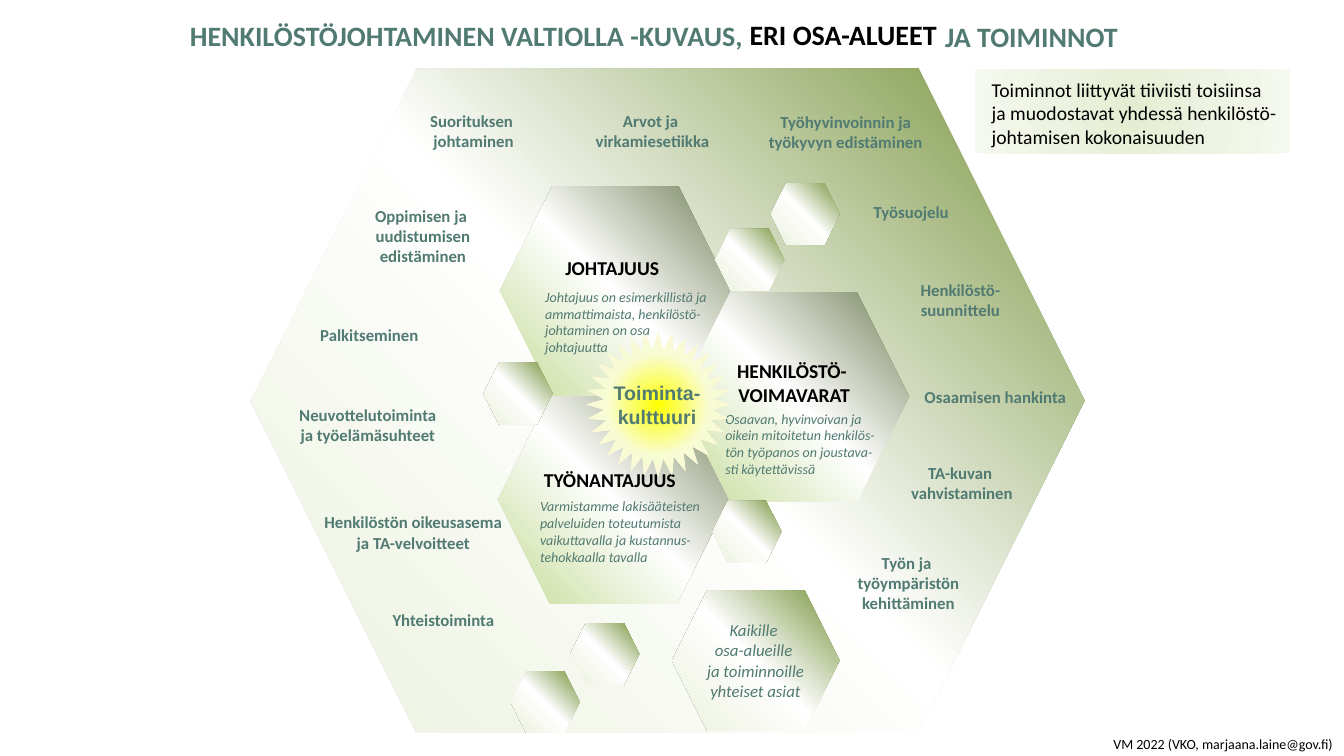
import copy
import dataclasses

import pptx
import pptx.dml.color
import pptx.enum.shapes
import pptx.enum.text
import pptx.oxml
import pptx.oxml.ns
import pptx.util

Cm = pptx.util.Cm
Kind = pptx.enum.shapes.MSO_SHAPE
Align = pptx.enum.text.PP_ALIGN
Anchor = pptx.enum.text.MSO_ANCHOR
qn = pptx.oxml.ns.qn


@dataclasses.dataclass(frozen=True)
class Theme:
    font: str = "Calibri"
    accent_font: str = "Arial"
    teal: str = "507A72"
    black: str = "000000"
    green: tuple = ("77933C", "FFFFFF", "EBF1DE")
    core: tuple = ("748259", "FFFFFF", "C5DB97")
    sun: tuple = ("FFFF00", "F8FCD4", "FDF2D9")
    note: tuple = ("E4EDD1", "EDF3E1", "F6F9F0")
    title: int = 20
    heading: int = 14
    label: int = 12
    small: int = 10


class Board:
    """Holds the theme and the current slide and draws each kind of element."""

    def __init__(self, page, theme):
        self.page = page
        self.theme = theme

    def group(self):
        return self.page.shapes.add_group_shape().shapes

    def shape(self, kind, place, colors, radial=False, into=None):
        canvas = self.page.shapes if into is None else into
        box = canvas.add_shape(kind, *map(Cm, place))
        box.shadow.inherit = False
        box.line.fill.background()
        box.fill.gradient()
        stops = "".join(
            f'<a:gs pos="{index * 50000}"><a:srgbClr val="{color}"/></a:gs>'
            for index, color in enumerate(colors)
        )
        if radial:
            course = '<a:path path="circle"><a:fillToRect l="50000" t="50000" r="50000" b="50000"/></a:path>'
        else:
            course = '<a:lin ang="8100000" scaled="0"/>'
        gradient = pptx.oxml.parse_xml(
            f'<a:gradFill {pptx.oxml.ns.nsdecls("a")} rotWithShape="1">'
            f"<a:gsLst>{stops}</a:gsLst>{course}</a:gradFill>"
        )
        properties = box.element.spPr
        properties.replace(properties.find(qn("a:gradFill")), gradient)

    def text(self, text, place, size=None, color=None, font=None, bold=False, italic=False,
             align=Align.LEFT, anchor=Anchor.TOP, wrap=True, inset=None, into=None):
        canvas = self.page.shapes if into is None else into
        frame = canvas.add_textbox(*map(Cm, place)).text_frame
        frame.word_wrap = wrap
        frame.vertical_anchor = anchor
        if inset is not None:
            frame.margin_left = frame.margin_right = Cm(inset)
            frame.margin_top = frame.margin_bottom = Cm(inset)
        frame.text = text
        for para in frame.paragraphs:
            para.alignment = align
            for span in para.runs:
                span.font.name = font or self.theme.font
                span.font.size = pptx.util.Pt(size or self.theme.label)
                span.font.bold = bold
                span.font.italic = italic
                span.font.color.rgb = pptx.dml.color.RGBColor.from_string(color or self.theme.teal)
            style = para._p.find(qn("a:r")).find(qn("a:rPr"))
            for line_break in para._p.findall(qn("a:br")):
                line_break.append(copy.deepcopy(style))

    def label(self, text, place, **style):
        self.text(text, place, align=Align.CENTER, anchor=Anchor.MIDDLE, **style)


CORE_SIZE = (5.82, 5.26)
CELL_SIZE = (1.73, 1.55)

CORES = [
    ((12.55, 9.96), "TYÖNANTAJUUS", (12.65, 11, 5.44, 2.18)),
    ((12.6, 4.7), "JOHTAJUUS", (12.32, 6.32, 6.22, 0.86)),
    ((17.09, 7.37), "HENKILÖSTÖ- \vVOIMAVARAT", (17.4, 8.92, 5.23, 1.45)),
]

CELLS = [(14.38, 15.7), (12.88, 16.92), (12.19, 9.14), (19.43, 4.62), (18.03, 5.77), (17.96, 12.62)]

DESCRIPTIONS = [
    ("Varmistamme lakisääteisten palveluiden toteutumista vaikuttavalla ja kustannus-\vtehokkaalla tavalla",
     (13.36, 12.42, 4.88, 1.96)),
    ("Osaavan, hyvinvoivan ja oikein mitoitetun henkilös-tön työpanos on joustava-sti käytettävissä",
     (18.03, 10.21, 4.37, 1.96)),
    ("Johtajuus on esimerkillistä ja ammattimaista, henkilöstö-johtaminen on osa johtajuutta",
     (13.49, 7.14, 4.6, 1.96)),
]

ACTIVITIES = [
    ("Suorituksen \vjohtaminen", (9.8, 2.64, 4.27, 1.3)),
    ("Arvot ja \vvirkamiesetiikka", (14.4, 2.64, 4.09, 1.3)),
    ("Työhyvinvoinnin ja työkyvyn edistäminen", (18.75, 2.87, 5.13, 0.89)),
    ("Työsuojelu", (21.11, 4.95, 3.71, 0.76)),
    ("Henkilöstö-suunnittelu", (22.12, 6.83, 4.17, 1.45)),
    ("Osaamisen hankinta", (22.43, 9.27, 5.31, 1.45)),
    ("TA-kuvan \vvahvistaminen", (22.38, 11.53, 3.73, 1.27)),
    ("Työn ja \vtyöympäristön\nkehittäminen", (21.23, 14.15, 3.33, 1.09)),
    ("Yhteistoiminta", (9.32, 15.24, 3.71, 0.76)),
    ("Henkilöstön oikeusasema ja TA-velvoitteet", (7.85, 12.78, 5.13, 1.27)),
    ("Neuvottelutoiminta\vja työelämäsuhteet", (6.88, 10.08, 4.78, 1.27)),
    ("Palkitseminen", (7.8, 8.05, 3.02, 0.76)),
    ("Oppimisen ja \vuudistumisen\vedistäminen", (8.69, 5.31, 3.94, 1.27)),
]


def main():
    theme = Theme()
    deck = pptx.Presentation()
    deck.slide_width, deck.slide_height = Cm(33.87), Cm(19.05)
    board = Board(deck.slides.add_slide(deck.slide_layouts[6]), theme)

    board.shape(Kind.HEXAGON, (6.32, 1.73, 21.01, 16.74), theme.green)
    for corner, name, place in CORES:
        core = board.group()
        board.shape(Kind.HEXAGON, corner + CORE_SIZE, theme.core, into=core)
        board.label(name, place, size=theme.heading, color=theme.black, bold=True, into=core)

    board.shape(Kind.HEXAGON, (16.94, 14.88, 4.22, 3.53), theme.green)
    board.label("Kaikille \vosa-alueille \vja toiminnoille yhteiset asiat",
                (17.4, 15.32, 3.28, 2.64), italic=True)
    for corner in CELLS:
        board.shape(Kind.HEXAGON, corner + CELL_SIZE, theme.green)
    for text, place in DESCRIPTIONS:
        board.text(text, place, size=theme.small, italic=True)
    for text, place in ACTIVITIES:
        board.label(text, place, bold=True)

    culture = board.group()
    board.shape(Kind.STAR_32_POINT, (14.78, 8.38, 3.61, 3.63), theme.sun, radial=True, into=culture)
    board.label("Toiminta-\vkulttuuri", (15.11, 9.6, 2.9, 1.19), size=theme.heading,
                font=theme.accent_font, bold=True, inset=0, into=culture)

    board.text("HENKILÖSTÖJOHTAMINEN VALTIOLLA -KUVAUS, ", (4.24, 0.33, 15.19, 1.12),
               size=theme.title, bold=True, align=Align.CENTER)
    board.text("ERI OSA-ALUEET", (18.64, 0, 6.15, 1.75), size=theme.title,
               color=theme.black, bold=True, anchor=Anchor.MIDDLE)
    board.text("JA TOIMINNOT", (23.57, 0.03, 6.17, 1.75), size=theme.title,
               bold=True, anchor=Anchor.MIDDLE)

    board.shape(Kind.RECTANGLE, (24.56, 1.75, 7.95, 2.11), theme.note, radial=True)
    board.text("Toiminnot liittyvät tiiviisti toisiinsa \vja muodostavat yhdessä henkilöstö-johtamisen kokonaisuuden",
               (24.74, 1.83, 8.05, 2.06), size=theme.heading, color=theme.black)
    board.text("VM 2022 (VKO, marjaana.laine@gov.fi)", (27.81, 18.42, 6.17, 0.69),
               size=theme.small, color=theme.black, wrap=False)
    deck.save("out.pptx")


if __name__ == "__main__":
    main()
